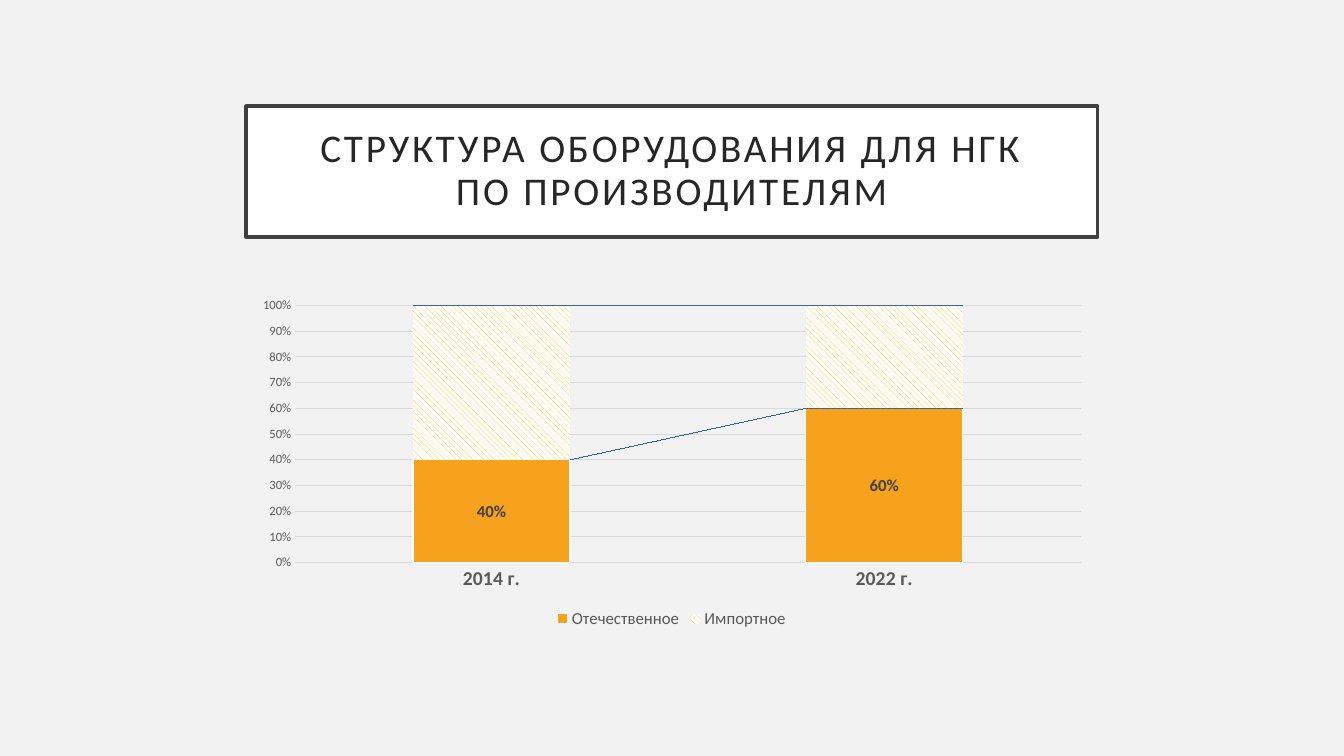
from lxml.etree import SubElement
from pptx import Presentation
from pptx.chart.data import CategoryChartData as ChartData
from pptx.dml.color import RGBColor
from pptx.enum.chart import XL_CHART_TYPE as ChartType
from pptx.enum.chart import XL_LABEL_POSITION as LabelPosition
from pptx.enum.chart import XL_LEGEND_POSITION as LegendPosition
from pptx.enum.chart import XL_TICK_MARK as TickMark
from pptx.enum.dml import MSO_PATTERN as Pattern
from pptx.enum.text import MSO_ANCHOR as Anchor
from pptx.enum.text import MSO_AUTO_SIZE as AutoSize
from pptx.enum.text import PP_ALIGN as Align
from pptx.oxml import parse_xml
from pptx.oxml.ns import nsdecls, qn
from pptx.util import Cm, Pt

FONT = "Calibri"
DARK, GRAY, GRID, WHITE = "404040", "595959", "D9D9D9", "FFFFFF"
ORANGE, YELLOW, BLUE = "F6A21D", "FFC000", "2F5FA8"

LEFT, WIDTH = Cm(6.2), Cm(21.46)
TITLE_BOX = (LEFT, Cm(2.67), WIDTH, Cm(3.3))
CHART_BOX = (LEFT, Cm(7.34), WIDTH, Cm(8.61))


def color(value):
    return RGBColor.from_string(value)


def format_font(font, size, tint, bold=False):
    font.name, font.size, font.bold = FONT, Pt(size), bold
    font.color.rgb = color(tint)


def format_line(line, tint, width):
    line.color.rgb = color(tint)
    line.width = Pt(width)


def write_text(frame, text, size, tint, bold=False, align=Align.LEFT,
               line_spacing=1.0, letter_spacing=0):
    para = frame.paragraphs[0]
    para.text = text
    para.alignment, para.line_spacing = align, line_spacing
    for span in para.runs:
        format_font(span.font, size, tint, bold)
        span.font._element.set("spc", str(letter_spacing * 100))


def add_title(page, box):
    title = page.shapes.title
    title.left, title.top, title.width, title.height = box
    title.fill.solid()
    title.fill.fore_color.rgb = color(WHITE)
    format_line(title.line, DARK, 2.5)
    frame = title.text_frame
    frame.word_wrap, frame.auto_size = True, AutoSize.NONE
    frame.vertical_anchor = Anchor.MIDDLE
    frame.margin_left = frame.margin_right = Cm(0.51)
    frame.margin_top = frame.margin_bottom = Cm(0.51)
    write_text(frame, "СТРУКТУРА ОБОРУДОВАНИЯ ДЛЯ НГК\vПО ПРОИЗВОДИТЕЛЯМ",
               28, "262626", align=Align.CENTER, line_spacing=0.9,
               letter_spacing=2)


def add_series_lines(plot):
    """Join the tops of neighbouring columns."""
    lines = parse_xml(f'<c:serLines {nsdecls("c", "a")}><c:spPr/></c:serLines>')
    line = SubElement(lines[0], qn("a:ln"), w=str(Pt(0.75)))
    fill = SubElement(line, qn("a:solidFill"))
    SubElement(fill, qn("a:srgbClr"), val=BLUE)
    plot._element.find(qn("c:overlap")).addnext(lines)


def format_axes(chart):
    category, value = chart.category_axis, chart.value_axis
    for axis, size, bold in ((category, 14, True), (value, 9, False)):
        axis.major_tick_mark = axis.minor_tick_mark = TickMark.NONE
        format_font(axis.tick_labels.font, size, GRAY, bold)
    format_line(category.format.line, GRID, 0.75)
    value.format.line.fill.background()
    value.has_major_gridlines = True
    format_line(value.major_gridlines.format.line, GRID, 0.75)
    value.minimum_scale, value.maximum_scale, value.major_unit = 0, 1, 0.1
    value.tick_labels.number_format = "0%"
    value.tick_labels.number_format_is_linked = False


def add_share_chart(page, box):
    data = ChartData(number_format="0%")
    data.categories = ["2014 г.", "2022 г."]
    data.add_series("Отечественное", [0.4, 0.6])
    data.add_series("Импортное", [0.6, 0.4])
    chart = page.shapes.add_chart(ChartType.COLUMN_STACKED_100, *box, data).chart
    format_font(chart.font, 10, "000000")
    chart.has_title = False
    format_axes(chart)

    # Columns
    plot = chart.plots[0]
    plot.gap_width, plot.overlap, plot.vary_by_categories = 150, 100, False
    add_series_lines(plot)
    domestic, imported = plot.series
    domestic.format.fill.solid()
    domestic.format.fill.fore_color.rgb = color(ORANGE)
    format_line(domestic.format.line, WHITE, 1)
    hatch = imported.format.fill
    hatch.patterned()
    hatch.pattern = Pattern.WIDE_DOWNWARD_DIAGONAL
    hatch.fore_color.rgb, hatch.back_color.rgb = color(YELLOW), color(WHITE)
    imported.format.line.fill.background()

    # Value labels
    labels = domestic.data_labels
    labels.show_value, labels.position = True, LabelPosition.CENTER
    labels.number_format, labels.number_format_is_linked = "0%", False
    format_font(labels.font, 12, DARK, bold=True)

    # Legend
    chart.has_legend = True
    chart.legend.position = LegendPosition.BOTTOM
    chart.legend.include_in_layout = False
    format_font(chart.legend.font, 12, GRAY)


def main():
    deck = Presentation()
    deck.slide_width, deck.slide_height = Cm(33.87), Cm(19.05)
    page = deck.slides.add_slide(deck.slide_layouts.get_by_name("Title Only"))
    page.background.fill.solid()
    page.background.fill.fore_color.rgb = color("F2F2F2")
    add_title(page, TITLE_BOX)
    add_share_chart(page, CHART_BOX)
    deck.save("out.pptx")


if __name__ == "__main__":
    main()
